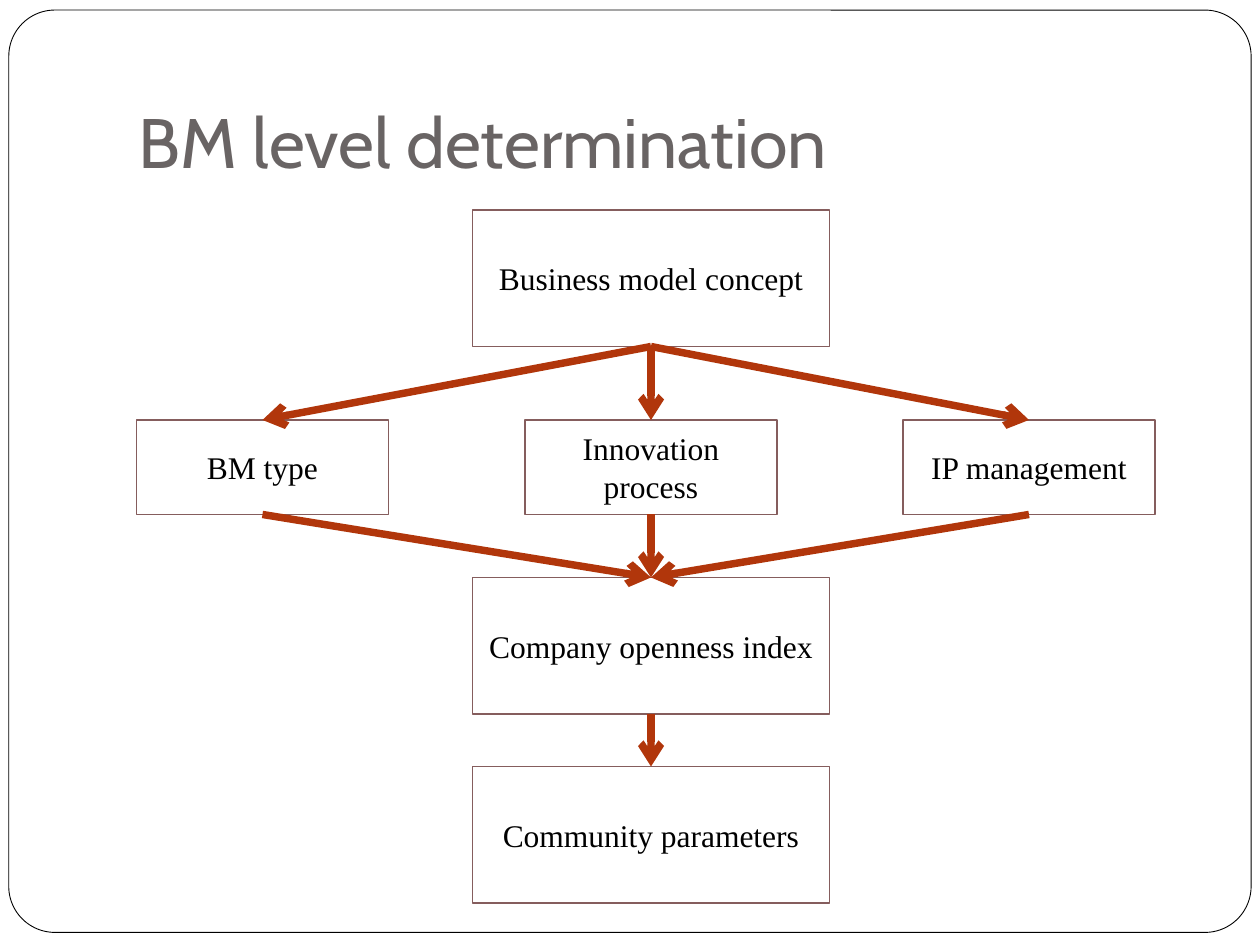
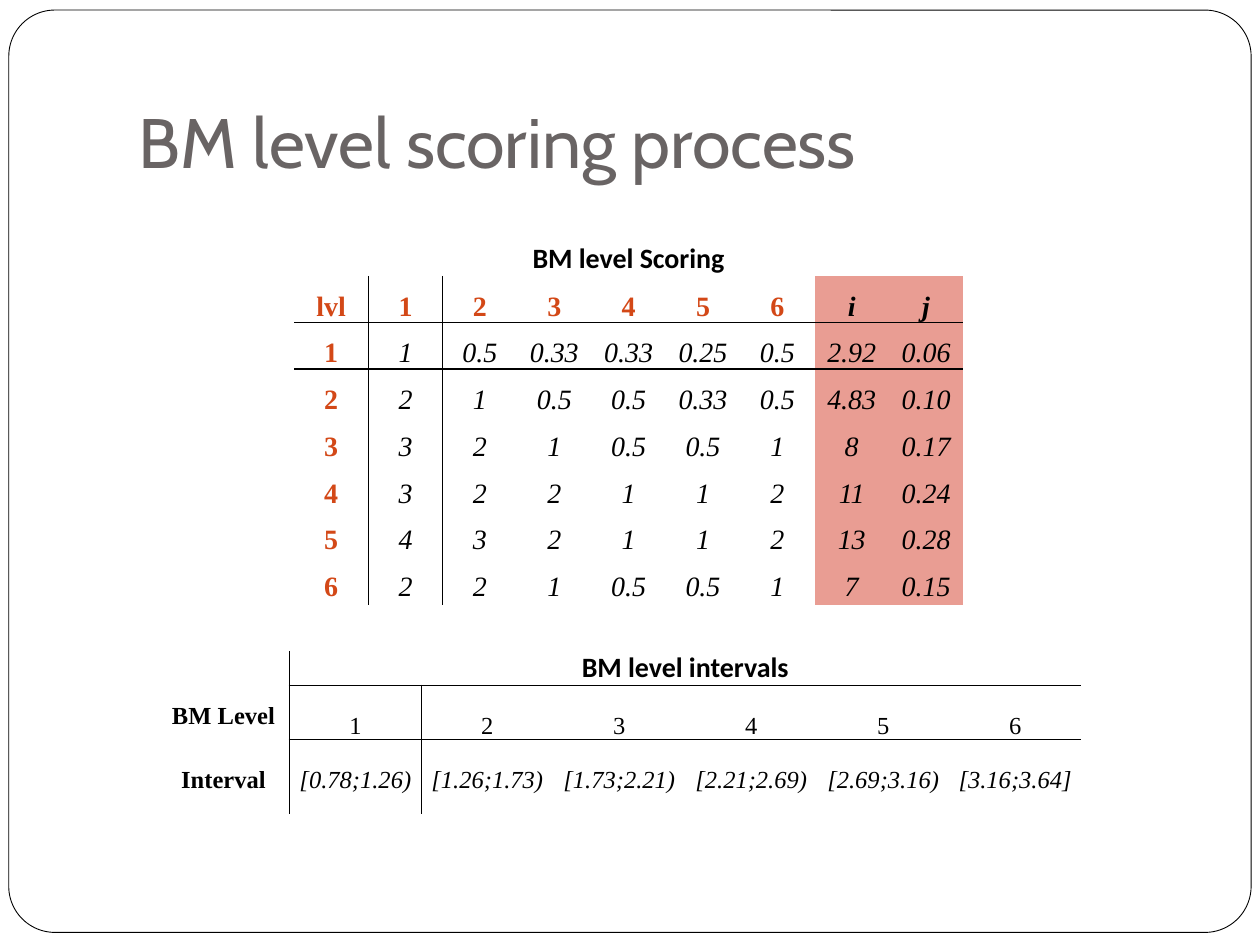
from lxml import etree
from pptx import Presentation
from pptx.dml.color import RGBColor
from pptx.enum.shapes import MSO_CONNECTOR, MSO_SHAPE
from pptx.enum.text import MSO_ANCHOR, MSO_AUTO_SIZE, PP_ALIGN
from pptx.oxml.ns import qn
from pptx.util import Inches, Pt

RECTANGLE, ROUNDED = MSO_SHAPE.RECTANGLE, MSO_SHAPE.ROUNDED_RECTANGLE
STRAIGHT = MSO_CONNECTOR.STRAIGHT
MIDDLE, BOTTOM, TOP = MSO_ANCHOR.MIDDLE, MSO_ANCHOR.BOTTOM, MSO_ANCHOR.TOP
LEFT, CENTER = PP_ALIGN.LEFT, PP_ALIGN.CENTER
NO_AUTOFIT = MSO_AUTO_SIZE.NONE
BOTTOM_SITE, TOP_SITE = 2, 0

SLIDE_WIDTH, SLIDE_HEIGHT = Inches(10), Inches(7.5)
UNIT = SLIDE_WIDTH / 120  # square grid: 120 columns by 90 rows
TITLE_ONLY = 5
PLAIN_TABLE_STYLE = "{2D5ABB26-0587-4C30-8999-92F81FD0307C}"

BLACK, WHITE, GREY = "000000", "FFFFFF", "696464"
BOX_LINE, ARROW, ORANGE, SALMON = "855D5D", "B1360B", "D34817", "E99D93"
TITLE_FONT, CAPTION_FONT, TEXT_FONT = "Cabin", "Calibri", "Times New Roman"

FACTORS = ["BM type", "Innovation process", "IP management"]
SCORES = [
    ["lvl", "1", "2", "3", "4", "5", "6", "i", "j"],
    ["1", "1", "0.5", "0.33", "0.33", "0.25", "0.5", "2.92", "0.06"],
    ["2", "2", "1", "0.5", "0.5", "0.33", "0.5", "4.83", "0.10"],
    ["3", "3", "2", "1", "0.5", "0.5", "1", "8", "0.17"],
    ["4", "3", "2", "2", "1", "1", "2", "11", "0.24"],
    ["5", "4", "3", "2", "1", "1", "2", "13", "0.28"],
    ["6", "2", "2", "1", "0.5", "0.5", "1", "7", "0.15"],
]
INTERVALS = ["[0.78;1.26)", "[1.26;1.73)", "[1.73;2.21)",
             "[2.21;2.69)", "[2.69;3.16)", "[3.16;3.64]"]


def color(hex_string):
    return RGBColor.from_string(hex_string)


def grid(*lengths):
    return [round(length * UNIT) for length in lengths]


def set_font(paragraph, name, size, hex_color=BLACK, bold=False, italic=False):
    font = paragraph.font
    font.name, font.size = name, Pt(size)
    font.bold, font.italic = bold, italic
    font.color.rgb = color(hex_color)


def add_box(slide, kind, position, line_color, line_width):
    shape = slide.shapes.add_shape(kind, *grid(*position))
    shape.shadow.inherit = False
    shape.fill.solid()
    shape.fill.fore_color.rgb = color(WHITE)
    shape.line.color.rgb = color(line_color)
    shape.line.width = Pt(line_width)
    return shape


def move_frame_to_layout(slide):
    """Put the rounded frame behind everything on the slide's layout."""
    frame = add_box(slide, ROUNDED, (0.84, 0.96, 118.32, 87.84), BLACK, 0.5)
    frame.adjustments[0] = 0.05
    slide.slide_layout.shapes._spTree.insert(2, frame._element)


def add_titled_slide(presentation, text):
    slide = presentation.slides.add_slide(presentation.slide_layouts[TITLE_ONLY])
    title = slide.shapes.title
    title.left, title.top, title.width, title.height = grid(12, 3.6, 102, 15)
    frame = title.text_frame
    frame.text = text
    frame.auto_size = NO_AUTOFIT
    frame.vertical_anchor = BOTTOM
    frame.margin_bottom = Inches(0.1)
    frame.paragraphs[0].alignment = LEFT
    set_font(frame.paragraphs[0], TITLE_FONT, 40, GREY)
    return slide


def add_concept(slide, text, position):
    shape = add_box(slide, RECTANGLE, position, BOX_LINE, 1)
    frame = shape.text_frame
    frame.text = text
    frame.word_wrap = True
    frame.vertical_anchor = MIDDLE
    frame.paragraphs[0].alignment = CENTER
    set_font(frame.paragraphs[0], TEXT_FONT, 18)
    return shape


def add_arrow(slide, source, target):
    connector = slide.shapes.add_connector(STRAIGHT, 0, 0, 0, 0)
    connector.begin_connect(source, BOTTOM_SITE)
    connector.end_connect(target, TOP_SITE)
    connector.line.color.rgb = color(ARROW)
    connector.line.width = Pt(4.25)
    properties = connector._element.spPr
    etree.SubElement(properties.find(qn("a:ln")), qn("a:tailEnd"), type="arrow")
    etree.SubElement(properties, qn("a:effectLst"))


def add_determination_diagram(slide, left, top):
    def add_main(text, row):
        return add_concept(slide, text, (left + 32, top + row, 34, 13))

    concept = add_main("Business model concept", 0)
    factors = [add_concept(slide, text, (left + column, top + 20, 24, 9))
               for text, column in zip(FACTORS, (0, 37, 73))]
    openness = add_main("Company openness index", 35)
    community = add_main("Community parameters", 53)
    for factor in factors:
        add_arrow(slide, concept, factor)
        add_arrow(slide, factor, openness)
    add_arrow(slide, openness, community)


def add_plain_table(slide, position, row_heights, column_count):
    left, top, width = position
    shape = slide.shapes.add_table(
        len(row_heights), column_count,
        *grid(left, top, width, sum(row_heights)))
    table = shape.table
    table.first_row = table.horz_banding = False
    table._tbl.tblPr.find(qn("a:tableStyleId")).text = PLAIN_TABLE_STYLE
    for row, height in zip(table.rows, grid(*row_heights)):
        row.height = height
    for column in table.columns:
        column.width = round(width * UNIT / column_count)
    return table


def fill_cell(cell, text, name, size, hex_color=BLACK, bold=False, italic=False,
              spacing=None, fill=None, anchor=TOP):
    cell.text = text
    cell.margin_left = cell.margin_right = Inches(0.07)
    cell.margin_top = cell.margin_bottom = 0
    cell.vertical_anchor = anchor
    paragraph = cell.text_frame.paragraphs[0]
    paragraph.alignment = CENTER
    paragraph.line_spacing = spacing
    set_font(paragraph, name, size, hex_color, bold, italic)
    if fill:
        cell.fill.solid()
        cell.fill.fore_color.rgb = color(fill)
    else:
        cell.fill.background()


def add_border(cell, side):
    properties = cell._tc.get_or_add_tcPr()
    line = etree.SubElement(properties, qn("a:ln" + side), w=str(Pt(1)))
    solid = etree.SubElement(line, qn("a:solidFill"))
    etree.SubElement(solid, qn("a:srgbClr"), val=BLACK)


def rule_table(table, ruled_rows, first_row, first_column):
    """Rule right of column 0 from first_row, and below ruled_rows from first_column."""
    for row in range(len(table.rows)):
        for column in range(len(table.columns)):
            sides = {"L": column == 1 and row >= first_row,
                     "R": column == 0 and row >= first_row,
                     "T": row - 1 in ruled_rows and column >= first_column,
                     "B": row in ruled_rows and column >= first_column}
            for side, drawn in sides.items():
                if drawn:
                    add_border(table.cell(row, column), side)


def add_scoring_table(slide, position):
    heights = [2.6] + [3.6] * 6 + [4.7]
    table = add_plain_table(slide, position, heights, len(SCORES[0]))
    rule_table(table, ruled_rows={1}, first_row=1, first_column=0)
    for column in range(len(SCORES[0])):
        caption = "" if column else "BM level Scoring"
        fill_cell(table.cell(0, column), caption, CAPTION_FONT, 16, bold=True)
    table.cell(0, 0).merge(table.cell(0, 8))
    for row, values in enumerate(SCORES, start=1):
        for column, value in enumerate(values):
            total = column >= 7
            heading = column == 0 or (row == 1 and not total)
            fill_cell(table.cell(row, column), value, TEXT_FONT, 16,
                      ORANGE if heading else BLACK,
                      bold=heading or row == 1, italic=not heading,
                      spacing=1.5, fill=SALMON if total else None)


def add_interval_table(slide, position):
    table = add_plain_table(slide, position, [2.8, 3.6, 0.7, 6.4], 7)
    rule_table(table, ruled_rows={0, 1}, first_row=0, first_column=1)
    for row, text in enumerate(["", "BM Level", "", "Interval"]):
        fill_cell(table.cell(row, 0), text, TEXT_FONT, 14, bold=True, anchor=MIDDLE)
        table.cell(row, 0).text_frame.paragraphs[0].space_after = Pt(10)
    for column, interval in enumerate(INTERVALS, start=1):
        caption = "BM level intervals" if column == 1 else ""
        fill_cell(table.cell(0, column), caption, CAPTION_FONT, 16, bold=True)
        fill_cell(table.cell(1, column), str(column), TEXT_FONT, 14, spacing=2.0)
        fill_cell(table.cell(2, column), interval, TEXT_FONT, 14, italic=True,
                  spacing=2.0)
        fill_cell(table.cell(3, column), "", TEXT_FONT, 14)
        table.cell(2, column).merge(table.cell(3, column))
    table.cell(0, 1).merge(table.cell(0, 6))
    table.cell(1, 0).merge(table.cell(2, 0))


def main():
    presentation = Presentation()
    presentation.slide_width, presentation.slide_height = SLIDE_WIDTH, SLIDE_HEIGHT

    determination = add_titled_slide(presentation, "BM level determination")
    move_frame_to_layout(determination)
    add_determination_diagram(determination, left=13, top=20)

    scoring = add_titled_slide(presentation, "BM level scoring process")
    add_scoring_table(scoring, (28, 23, 63.75))
    add_interval_table(scoring, (15, 62, 88))

    presentation.save("out.pptx")


if __name__ == "__main__":
    main()
